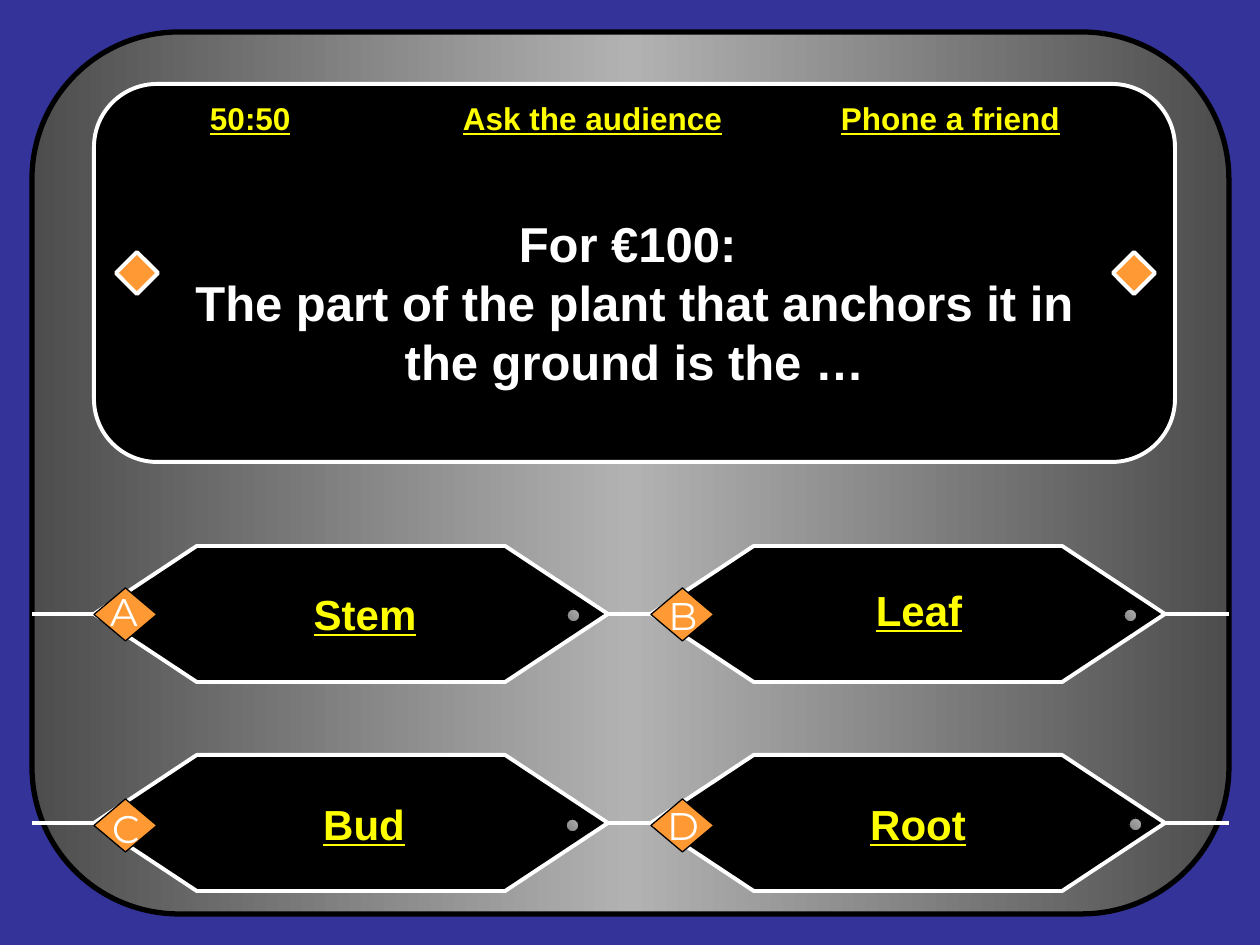
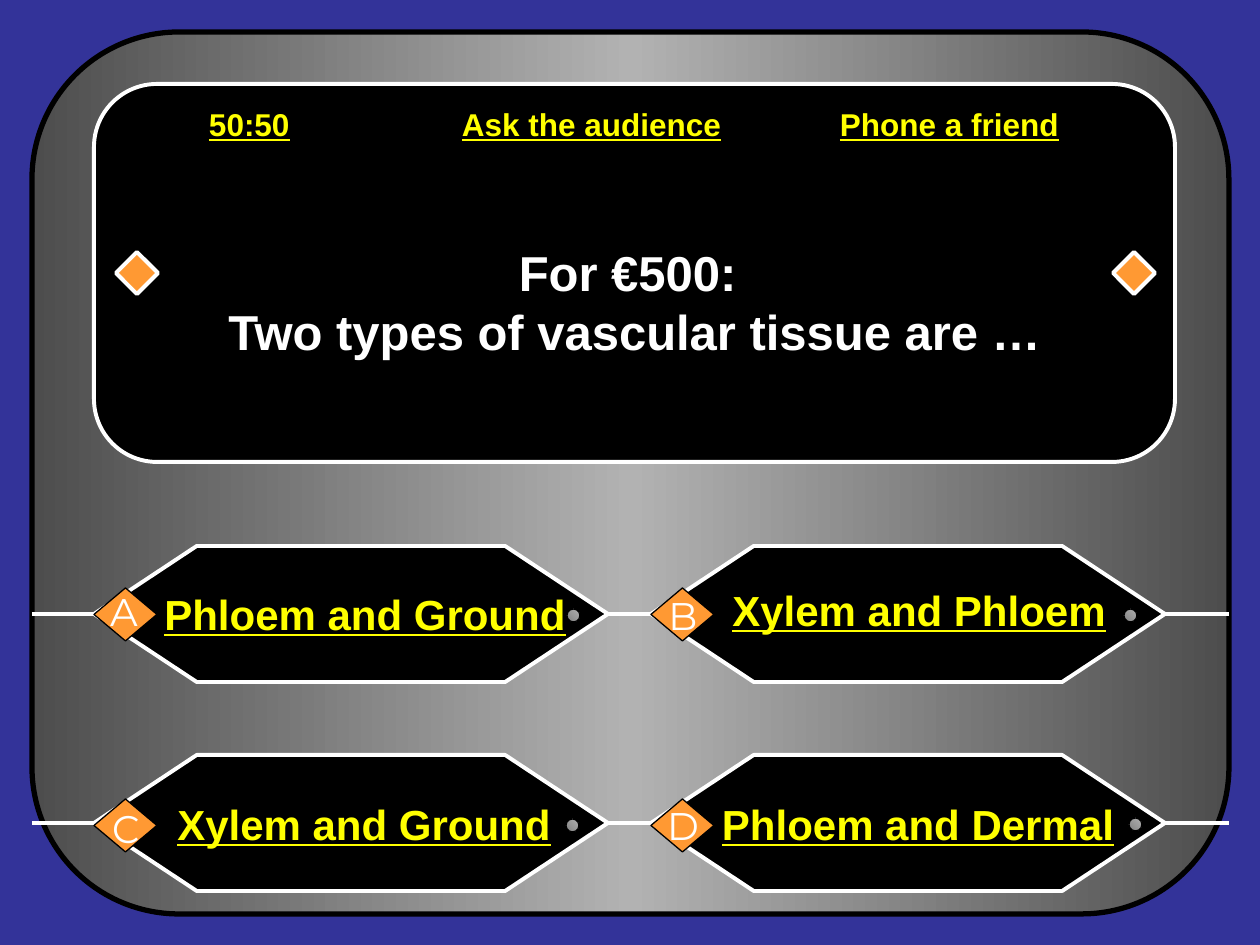
"""Builds two quiz-show question slides with lifelines and four answers."""
from lxml.etree import SubElement
from pptx import Presentation
from pptx.dml.color import RGBColor
from pptx.enum.shapes import MSO_CONNECTOR as Connector, MSO_SHAPE as Preset
from pptx.enum.text import MSO_ANCHOR as Anchor, PP_ALIGN as Align
from pptx.oxml.ns import qn
from pptx.util import Pt

QUESTIONS = [
    {
        "question": ["For €100: ", "The part of the plant that anchors it in", "the ground is the …"],
        "answers": ["Stem", "Leaf", "Bud", "Root"],
        "lifelines_box": (101, 87, 1067, 62),
    },
    {
        "question": ["For €500: ", "Two types of vascular tissue are …"],
        "answers": ["Phloem and Ground", "Xylem and Phloem", "Xylem and Ground", "Phloem and Dermal"],
        "lifelines_box": (100, 88, 1067, 72),
    },
]
LIFELINES = ["50:50", "Ask the audience", "Phone a friend"]
LIFELINE_INDENT = 109
LIFELINE_TABS = [253, 631]

OPTIONS = [
    {"letter": "A", "letter_at": (94, 582), "dot_at": (567, 609), "answer_at": (155, 552)},
    {"letter": "B", "letter_at": (653, 586), "dot_at": (1124, 609), "answer_at": (709, 548)},
    {"letter": "C", "letter_at": (96, 799), "dot_at": (566, 819), "answer_at": (154, 762)},
    {"letter": "D", "letter_at": (653, 796), "dot_at": (1129, 818), "answer_at": (708, 762)},
]
COLUMN_LEFTS = [94, 651]
ROW_TOPS = [546, 755]
BADGE_TOPS = [588, 799]
HEXAGON, BADGE, LETTER, DOT, ANSWER = (514, 136), (63, 53), (60, 59), (13, 13), (420, 123)

SLIDE_SIZE = (1260, 945)
PANEL = (32, 32, 1197, 882)
QUESTION_BOX = (94, 84, 1081, 378)
QUESTION_TOP_INSET = 64
MARKER_LEFTS, MARKER_TOP, MARKER_SIZE = [116, 1113], 252, 42

BLUE = RGBColor(0x33, 0x33, 0x99)
BLACK = RGBColor(0x00, 0x00, 0x00)
WHITE = RGBColor(0xFF, 0xFF, 0xFF)
YELLOW = RGBColor(0xFF, 0xFF, 0x00)
ORANGE = RGBColor(0xFF, 0x99, 0x33)
DARK_GREY = RGBColor(0x4D, 0x4D, 0x4D)
MID_GREY = RGBColor(0x80, 0x80, 0x80)
LIGHT_GREY = RGBColor(0xB2, 0xB2, 0xB2)


def px(length):
    return round(length * 914400 / 126)


def add_preset(slide, preset, box, fill=None, line=None, weight=0.75):
    shape = slide.shapes.add_shape(preset, *map(px, box))
    shape.shadow.inherit = False
    if fill is None:
        shape.fill.background()
    else:
        shape.fill.solid()
        shape.fill.fore_color.rgb = fill
    if line is None:
        shape.line.fill.background()
    else:
        shape.line.color.rgb = line
        shape.line.width = Pt(weight)
    return shape


def set_gradient(shape, colors, angle):
    shape.fill.gradient()
    shape.fill.gradient_angle = angle
    stops = shape._element.spPr.find(".//" + qn("a:gsLst"))
    for stop in list(stops):
        stops.remove(stop)
    for index, color in enumerate(colors):
        stop = SubElement(stops, qn("a:gs"), pos=str(100000 * index // (len(colors) - 1)))
        SubElement(stop, qn("a:srgbClr"), val=str(color))


def add_wire(slide, start, end, y, start_hexagon=None, end_hexagon=None):
    wire = slide.shapes.add_connector(Connector.STRAIGHT, px(start), px(y), px(end), px(y))
    wire.line.color.rgb = WHITE
    wire.line.width = Pt(2.25)
    SubElement(wire._element.spPr, qn("a:effectLst"))
    if start_hexagon is not None:
        wire.begin_connect(start_hexagon, 3)
    if end_hexagon is not None:
        wire.end_connect(end_hexagon, 1)


def style(run, size, color, bold=True, underline=False, face="Arial"):
    run.font.size = Pt(size)
    run.font.name = face
    run.font.color.rgb = color
    run.font.bold = bold
    run.font.underline = underline


def write_centred(shape, lines, **look):
    frame = shape.text_frame
    frame.text = "\n".join(lines)
    for paragraph in frame.paragraphs:
        paragraph.alignment = Align.CENTER
        for run in paragraph.runs:
            style(run, **look)
    return frame


def add_answer_row(slide, top):
    left, right = [
        add_preset(slide, Preset.FLOWCHART_PREPARATION, (x, top, *HEXAGON), BLACK, WHITE, 2.25)
        for x in COLUMN_LEFTS
    ]
    middle = top + HEXAGON[1] // 2
    left_ends, right_ends = [(x, x + HEXAGON[0]) for x in COLUMN_LEFTS]
    add_wire(slide, PANEL[0], left_ends[0], middle, end_hexagon=left)
    add_wire(slide, left_ends[1], right_ends[0], middle, left, right)
    add_wire(slide, right_ends[1], PANEL[0] + PANEL[2], middle, start_hexagon=right)


def add_question(slide, lines):
    board = add_preset(slide, Preset.FLOWCHART_ALTERNATE_PROCESS, QUESTION_BOX, BLACK, WHITE, 2.25)
    frame = write_centred(board, lines, size=28, color=WHITE)
    frame.word_wrap = False
    frame.vertical_anchor = Anchor.MIDDLE
    frame.margin_top = px(QUESTION_TOP_INSET)
    for left in MARKER_LEFTS:
        add_preset(slide, Preset.DIAMOND, (left, MARKER_TOP, MARKER_SIZE, MARKER_SIZE), ORANGE, WHITE, 2.25)


def add_option(slide, index, option, answer):
    row, column = divmod(index, 2)
    add_preset(slide, Preset.DIAMOND, (COLUMN_LEFTS[column], BADGE_TOPS[row], *BADGE), ORANGE, BLACK)
    letter = slide.shapes.add_textbox(*map(px, (*option["letter_at"], *LETTER)))
    write_centred(letter, [option["letter"]], size=22, color=WHITE, bold=False, face="Montserrat").word_wrap = True
    dot = add_preset(slide, Preset.FLOWCHART_CONNECTOR, (*option["dot_at"], *DOT), MID_GREY, BLACK)
    set_gradient(dot, [MID_GREY, LIGHT_GREY], 45)
    button = add_preset(slide, Preset.ACTION_BUTTON_CUSTOM, (*option["answer_at"], *ANSWER))
    frame = write_centred(button, [answer], size=24, color=YELLOW, underline=True)
    frame.word_wrap = False
    frame.vertical_anchor = Anchor.MIDDLE


def add_lifelines(slide, box):
    frame = slide.shapes.add_textbox(*map(px, box)).text_frame
    frame.word_wrap = True
    frame.vertical_anchor = Anchor.MIDDLE
    frame.margin_left = px(LIFELINE_INDENT)
    paragraph = frame.paragraphs[0]
    paragraph.alignment = Align.LEFT
    tabs = SubElement(paragraph._p.get_or_add_pPr(), qn("a:tabLst"))
    for position in LIFELINE_TABS:
        SubElement(tabs, qn("a:tab"), pos=str(px(position)), algn="l")
    for index, lifeline in enumerate(LIFELINES):
        if index:
            gap = paragraph.add_run()
            gap.text = "\t"
            style(gap, 18, WHITE)
        run = paragraph.add_run()
        run.text = lifeline
        style(run, 18, YELLOW, underline=True)


def add_question_slide(deck, content):
    slide = deck.slides.add_slide(deck.slide_layouts[6])
    slide.background.fill.solid()
    slide.background.fill.fore_color.rgb = BLUE
    panel = add_preset(slide, Preset.FLOWCHART_ALTERNATE_PROCESS, PANEL, DARK_GREY, BLACK, 3)
    set_gradient(panel, [DARK_GREY, LIGHT_GREY, DARK_GREY], 0)
    for top in ROW_TOPS:
        add_answer_row(slide, top)
    add_question(slide, content["question"])
    for index, (option, answer) in enumerate(zip(OPTIONS, content["answers"])):
        add_option(slide, index, option, answer)
    add_lifelines(slide, content["lifelines_box"])


def main():
    deck = Presentation()
    deck.slide_width, deck.slide_height = map(px, SLIDE_SIZE)
    for content in QUESTIONS:
        add_question_slide(deck, content)
    deck.save("out.pptx")


if __name__ == "__main__":
    main()
